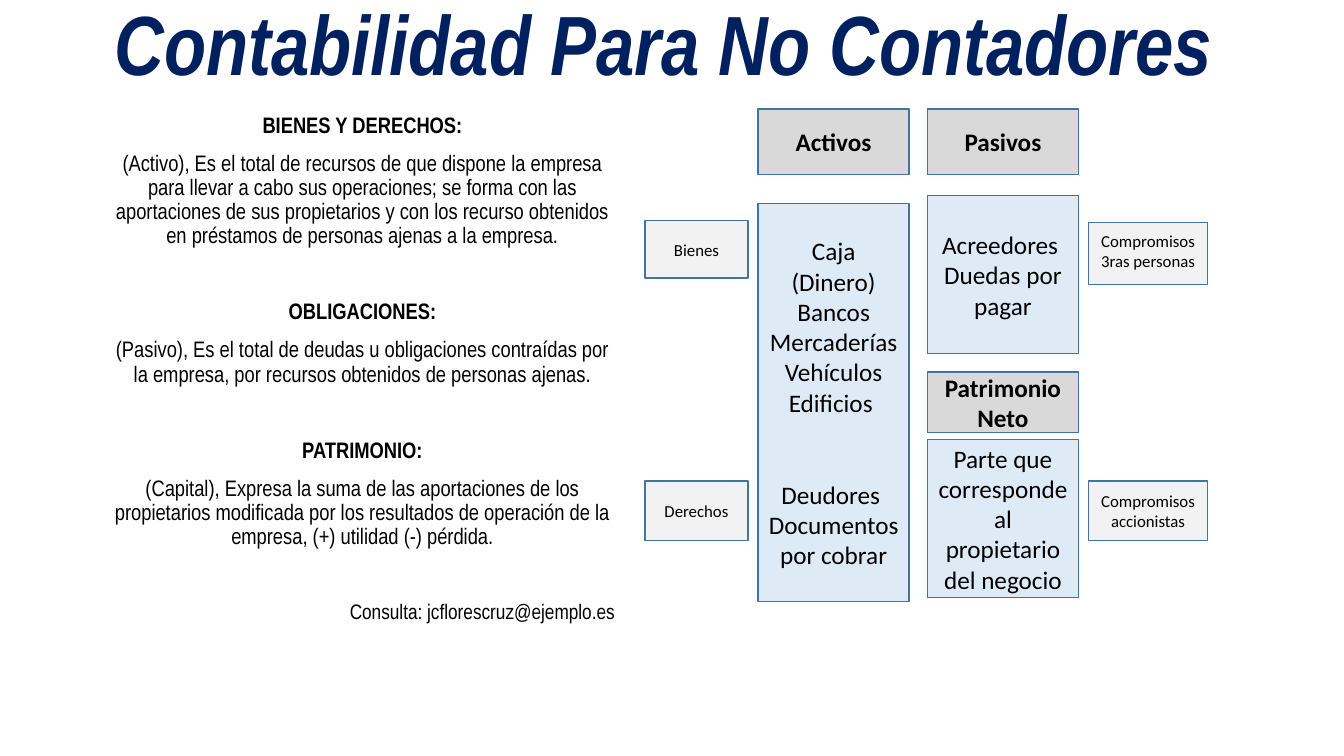
from dataclasses import dataclass

from pptx import Presentation
from pptx.dml.color import RGBColor
from pptx.enum.shapes import MSO_SHAPE
from pptx.enum.text import MSO_ANCHOR, MSO_AUTO_SIZE, PP_ALIGN
from pptx.util import Inches, Pt

NAVY = RGBColor(0x00, 0x20, 0x60)
BLACK = RGBColor(0x00, 0x00, 0x00)
OUTLINE = RGBColor(0x43, 0x73, 0x9E)
HEADER_GREY = RGBColor(0xD9, 0xD9, 0xD9)
LABEL_GREY = RGBColor(0xF2, 0xF2, 0xF2)
PALE_BLUE = RGBColor(0xDE, 0xEB, 0xF7)

SLIDE_WIDTH, SLIDE_HEIGHT = Inches(13.33), Inches(7.5)
NARROW, CALIBRI = "Arial Narrow", "Calibri"
SECTION_GAP = 37  # points before each new section of the definitions
GROUP_GAP = 44  # points between goods and rights inside the assets box


@dataclass(frozen=True)
class Span:
    """Start and length in percent of the slide's width or height."""
    start: float
    length: float


@dataclass(frozen=True)
class Line:
    text: str
    size: float
    font: str
    bold: bool = False
    italic: bool = False
    color: RGBColor = BLACK
    align: PP_ALIGN = PP_ALIGN.CENTER
    before: float = 0
    spacing: float = 1.0


@dataclass(frozen=True)
class BoxStyle:
    fill: RGBColor
    size: float
    bold: bool = False


@dataclass(frozen=True)
class Box:
    column: Span
    row: Span
    style: BoxStyle
    lines: tuple[str, ...]
    gap_before: str = ""
    bottom_inset: float = 0.05


HEADER = BoxStyle(HEADER_GREY, 18, bold=True)
CONTENT = BoxStyle(PALE_BLUE, 18)
LABEL = BoxStyle(LABEL_GREY, 12)

LEFT_LABELS = Span(48, 7.65)
ASSETS = Span(56.4, 11.25)
CLAIMS = Span(69, 11.25)
RIGHT_LABELS = Span(81, 8.85)

HEADER_ROW = Span(14.4, 8.67)
LOWER_LABEL_ROW = Span(63.65, 7.87)

BOXES = (
    Box(LEFT_LABELS, Span(29.2, 7.6), LABEL, ("Bienes",)),
    Box(LEFT_LABELS, LOWER_LABEL_ROW, LABEL, ("Derechos",)),
    Box(ASSETS, HEADER_ROW, HEADER, ("Activos",)),
    Box(ASSETS, Span(26.93, 52.67), CONTENT,
        ("Caja (Dinero)", "Bancos", "Mercaderías", "Vehículos", "Edificios ",
         "Deudores ", "Documentos por cobrar"), gap_before="Deudores "),
    Box(CLAIMS, Span(25.87, 20.93), CONTENT, ("Acreedores ", "Duedas por pagar")),
    Box(CLAIMS, HEADER_ROW, HEADER, ("Pasivos",)),
    Box(RIGHT_LABELS, Span(29.47, 8.13), LABEL,
        ("Compromisos 3ras personas",), bottom_inset=0.11),
    Box(CLAIMS, Span(49.2, 8), HEADER, ("Patrimonio Neto",)),
    Box(CLAIMS, Span(58.13, 20.93), CONTENT,
        ("Parte que corresponde al propietario del negocio",)),
    Box(RIGHT_LABELS, LOWER_LABEL_ROW, LABEL, ("Compromisos accionistas",)),
)

DEFINITIONS = (
    ("BIENES Y DERECHOS:",
     "(Activo), Es el total de recursos de que dispone la empresa para llevar a cabo "
     "sus operaciones; se forma con las aportaciones de sus propietarios y con los "
     "recurso obtenidos en préstamos de personas ajenas a la empresa."),
    ("OBLIGACIONES:",
     "(Pasivo), Es el total de deudas u obligaciones contraídas por la empresa, "
     "por recursos obtenidos de personas ajenas."),
    ("PATRIMONIO:",
     "(Capital), Expresa la suma de las aportaciones de los propietarios modificada "
     "por los resultados de operación de la empresa, (+) utilidad (-) pérdida."),
)


def frame(column: Span, row: Span) -> tuple[int, int, int, int]:
    """Left, top, width and height in EMU."""
    return (int(SLIDE_WIDTH * column.start / 100), int(SLIDE_HEIGHT * row.start / 100),
            int(SLIDE_WIDTH * column.length / 100), int(SLIDE_HEIGHT * row.length / 100))


def write(text_frame, lines: list[Line], anchor: MSO_ANCHOR) -> None:
    text_frame.word_wrap = True
    text_frame.auto_size = MSO_AUTO_SIZE.NONE
    text_frame.vertical_anchor = anchor
    for index, line in enumerate(lines):
        paragraph = text_frame.add_paragraph() if index else text_frame.paragraphs[0]
        paragraph.alignment = line.align
        paragraph.line_spacing = line.spacing
        paragraph.space_before = Pt(line.before)
        run = paragraph.add_run()
        run.text = line.text
        run.font.name = line.font
        run.font.size = Pt(line.size)
        run.font.bold = line.bold
        run.font.italic = line.italic
        run.font.color.rgb = line.color


def add_title(slide) -> None:
    title = slide.shapes.title
    title.left, title.top, title.width, title.height = frame(
        Span(6.3, 86.2), Span(1.6, 11.47))
    write(title.text_frame,
          [Line("Contabilidad Para No Contadores", 60, NARROW, bold=True, italic=True,
                color=NAVY, spacing=0.9)], MSO_ANCHOR.BOTTOM)


def add_definitions(slide) -> None:
    lines = []
    for heading, meaning in DEFINITIONS:
        lines += [
            Line(heading, 16, NARROW, bold=True, spacing=0.9,
                 before=SECTION_GAP if lines else 10),
            Line(meaning, 16, NARROW, before=10, spacing=0.9),
        ]
    lines.append(Line("Consulta: jcflorescruz@ejemplo.es", 15, NARROW,
                      align=PP_ALIGN.RIGHT, before=SECTION_GAP, spacing=0.9))
    definitions = slide.shapes.add_textbox(*frame(Span(7.43, 39.08), Span(14.4, 77.6)))
    write(definitions.text_frame, lines, MSO_ANCHOR.TOP)


def add_box(slide, box: Box) -> None:
    shape = slide.shapes.add_shape(MSO_SHAPE.RECTANGLE, *frame(box.column, box.row))
    shape.shadow.inherit = False
    shape.fill.solid()
    shape.fill.fore_color.rgb = box.style.fill
    shape.line.color.rgb = OUTLINE
    shape.line.width = Pt(1)
    shape.text_frame.margin_bottom = Inches(box.bottom_inset)
    lines = [Line(text, box.style.size, CALIBRI, bold=box.style.bold,
                  before=GROUP_GAP if text == box.gap_before else 0)
             for text in box.lines]
    write(shape.text_frame, lines, MSO_ANCHOR.MIDDLE)


def main() -> None:
    presentation = Presentation()
    presentation.slide_width, presentation.slide_height = SLIDE_WIDTH, SLIDE_HEIGHT
    slide = presentation.slides.add_slide(
        presentation.slide_layouts.get_by_name("Title Only"))
    add_title(slide)
    add_definitions(slide)
    for box in BOXES:
        add_box(slide, box)
    presentation.save("out.pptx")


if __name__ == "__main__":
    main()
